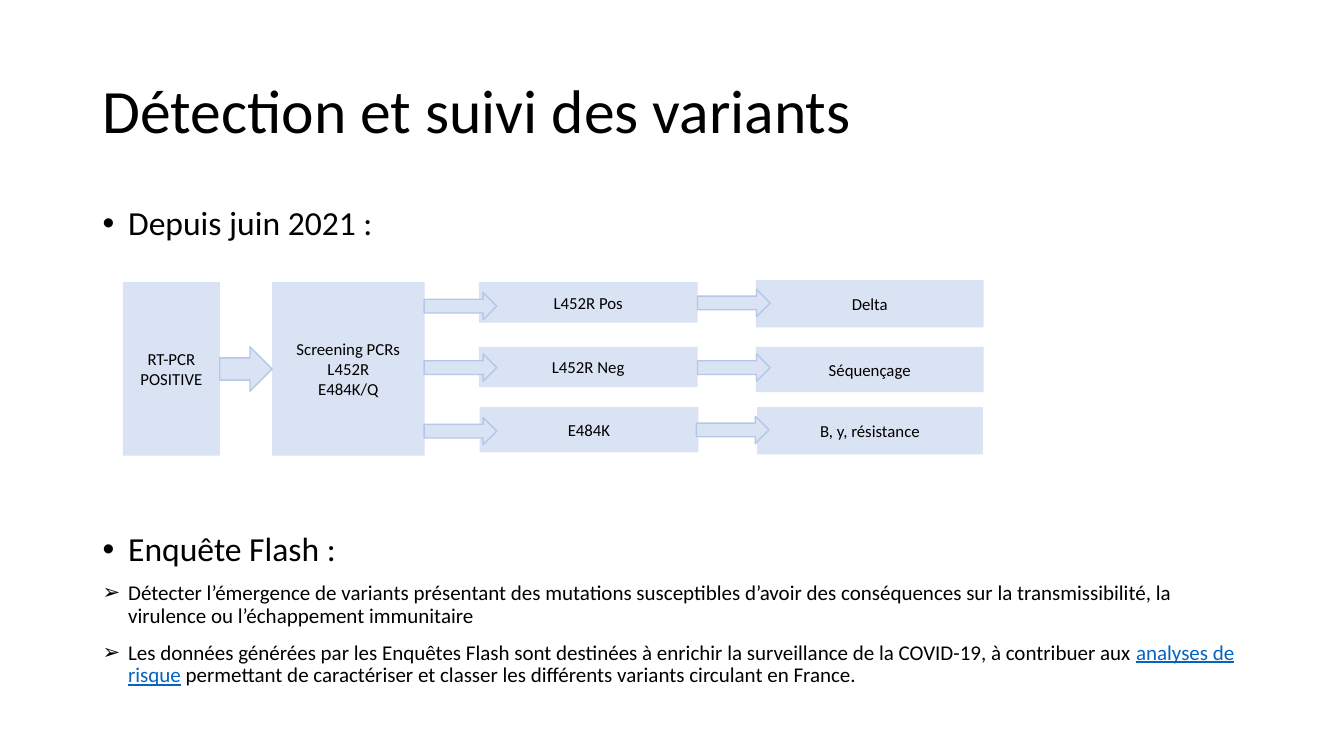
from lxml import etree
from pptx import Presentation
from pptx import util as u
from pptx.dml.color import RGBColor
from pptx.enum import shapes, text
from pptx.oxml.ns import qn


def color(hex_code):
    return RGBColor.from_string(hex_code)


def add_run(paragraph, words, size, hex_code="000000"):
    run = paragraph.add_run()
    run.text = words
    run.font.name = "Calibri"
    run.font.size = u.Pt(size)
    run.font.color.rgb = color(hex_code)
    return run


deck = Presentation()
deck.slide_width, deck.slide_height = u.Cm(33.87), u.Cm(19.05)
slide = deck.slides.add_slide(deck.slide_layouts[6])

LINK = "0563C1"
sections = [
    (1.02, 3.68, text.MSO_ANCHOR.MIDDLE, [
        (None, 44, ["Détection et suivi des variants"]),
    ]),
    (5.08, 1.3, text.MSO_ANCHOR.TOP, [
        ("•", 24, ["Depuis juin 2021 :"]),
    ]),
    (13.29, 4.5, text.MSO_ANCHOR.TOP, [
        ("•", 24, ["Enquête Flash :"]),
        ("➢", 15, ["Détecter l’émergence de variants présentant des mutations "
                   "susceptibles d’avoir des conséquences sur la transmissibilité, "
                   "la virulence ou l’échappement immunitaire"]),
        ("➢", 15, ["Les données générées par les Enquêtes Flash sont destinées à "
                   "enrichir la surveillance de la COVID-19, à contribuer aux ",
                   "analyses de risque",
                   " permettant de caractériser et classer les différents variants "
                   "circulant en France."]),
    ]),
]
for top, height, anchor, paragraphs in sections:
    section = slide.shapes.add_textbox(u.Cm(2.34), u.Cm(top), u.Cm(29.21), u.Cm(height))
    frame = section.text_frame
    frame.word_wrap = True
    frame.vertical_anchor = anchor
    for index, (bullet, size, pieces) in enumerate(paragraphs):
        paragraph = frame.add_paragraph() if index else frame.paragraphs[0]
        paragraph.line_spacing = 0.9
        if index:
            paragraph.space_before = u.Pt(10)
        for piece in pieces:
            is_link = piece == "analyses de risque"
            run = add_run(paragraph, piece, size, LINK if is_link else "000000")
            if is_link:
                run.font.underline = True
        if bullet:
            properties = paragraph._p.get_or_add_pPr()
            properties.set("marL", str(u.Cm(0.64)))
            properties.set("indent", str(-u.Cm(0.64)))
            etree.SubElement(properties, qn("a:buFont")).set("typeface", "Arial")
            etree.SubElement(properties, qn("a:buChar")).set("char", bullet)

steps = [
    (3.1, 7.11, 2.44, 4.37, ["RT-PCR", "POSITIVE"]),
    (6.86, 7.11, 3.84, 4.37, ["Screening PCRs", "L452R", "E484K/Q"]),
    (12.07, 7.11, 5.51, 1.02, ["L452R Pos"]),
    (12.07, 8.74, 5.51, 1.02, ["L452R Neg"]),
    (12.09, 10.26, 5.51, 1.14, ["E484K"]),
    (19.05, 7.06, 5.74, 1.19, ["Delta"]),
    (19.05, 8.74, 5.74, 1.14, ["Séquençage"]),
    (19.08, 10.26, 5.69, 1.19, ["B, y, résistance"]),
]
for left, top, width, height, lines in steps:
    step = slide.shapes.add_shape(shapes.MSO_SHAPE.RECTANGLE, u.Cm(left), u.Cm(top),
                                  u.Cm(width), u.Cm(height))
    step.shadow.inherit = False
    step.fill.solid()
    step.fill.fore_color.rgb = color("DAE3F3")
    step.line.fill.background()
    frame = step.text_frame
    frame.word_wrap = True
    frame.vertical_anchor = text.MSO_ANCHOR.MIDDLE
    for index, line in enumerate(lines):
        paragraph = frame.add_paragraph() if index else frame.paragraphs[0]
        paragraph.alignment = text.PP_ALIGN.CENTER
        add_run(paragraph, line, 12)

arrows = [(5.54, 8.74, 1.32, 1.12)]
arrows += [(10.69, top, 1.83, 0.69) for top in (7.37, 8.92, 10.52)]
arrows += [(left, top, 1.83, 0.69)
           for left, top in ((17.58, 7.29), (17.58, 8.92), (17.55, 10.49))]
for left, top, width, height in arrows:
    arrow = slide.shapes.add_shape(shapes.MSO_SHAPE.RIGHT_ARROW, u.Cm(left), u.Cm(top),
                                   u.Cm(width), u.Cm(height))
    arrow.shadow.inherit = False
    arrow.fill.solid()
    arrow.fill.fore_color.rgb = color("DAE3F3")
    arrow.line.color.rgb = color("B4C7E7")
    arrow.line.width = u.Pt(1)

deck.save("out.pptx")
